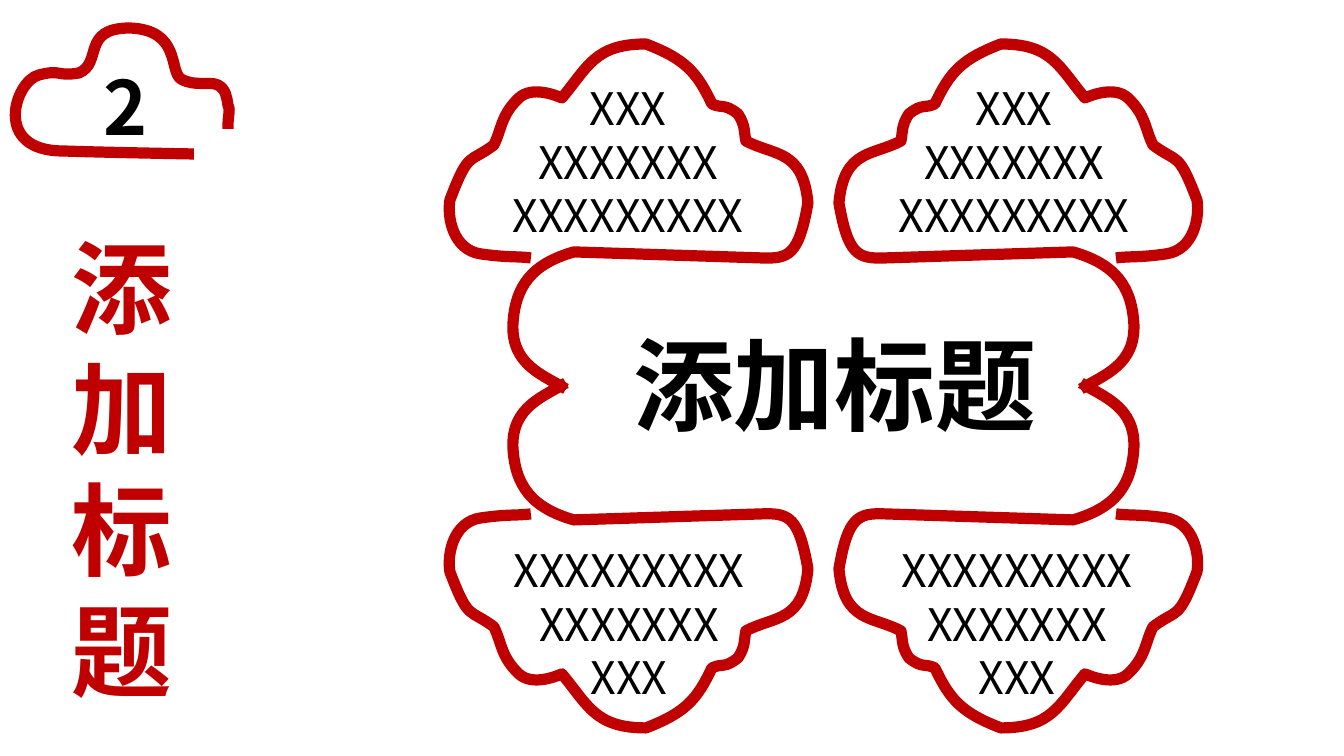
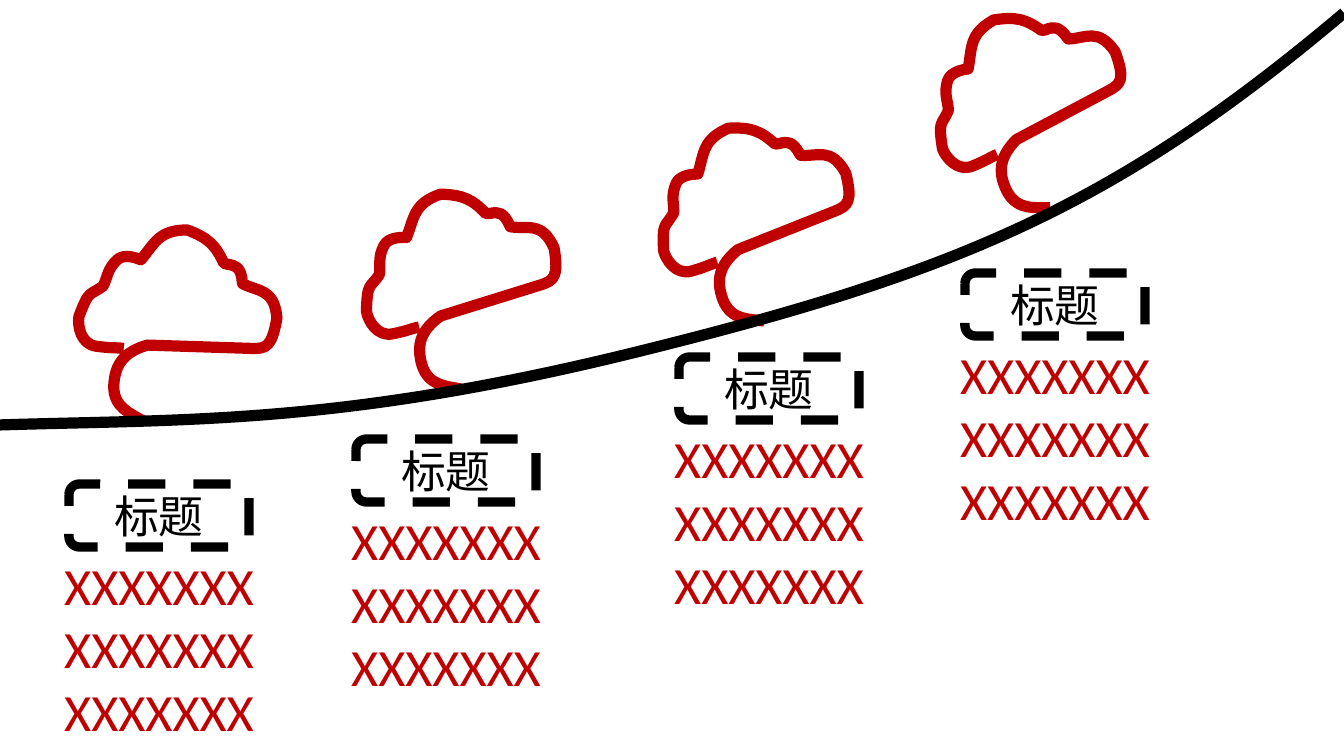
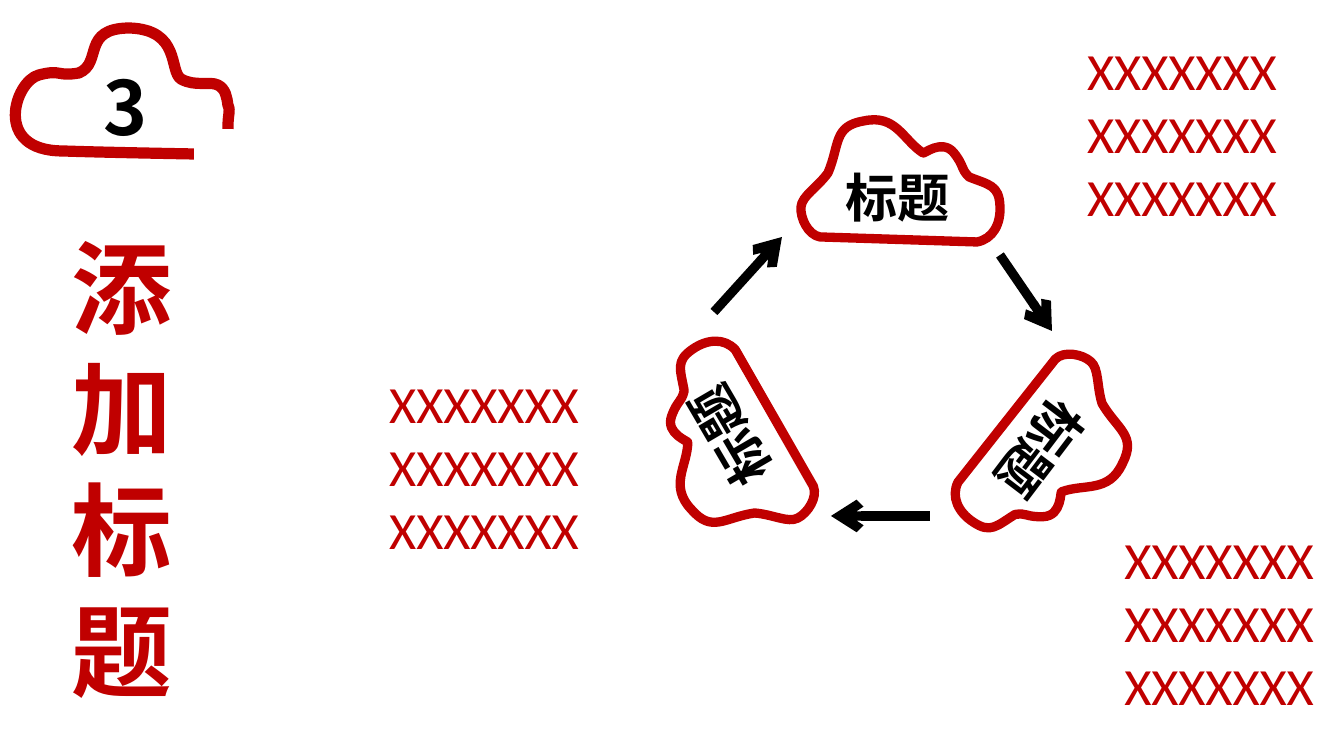
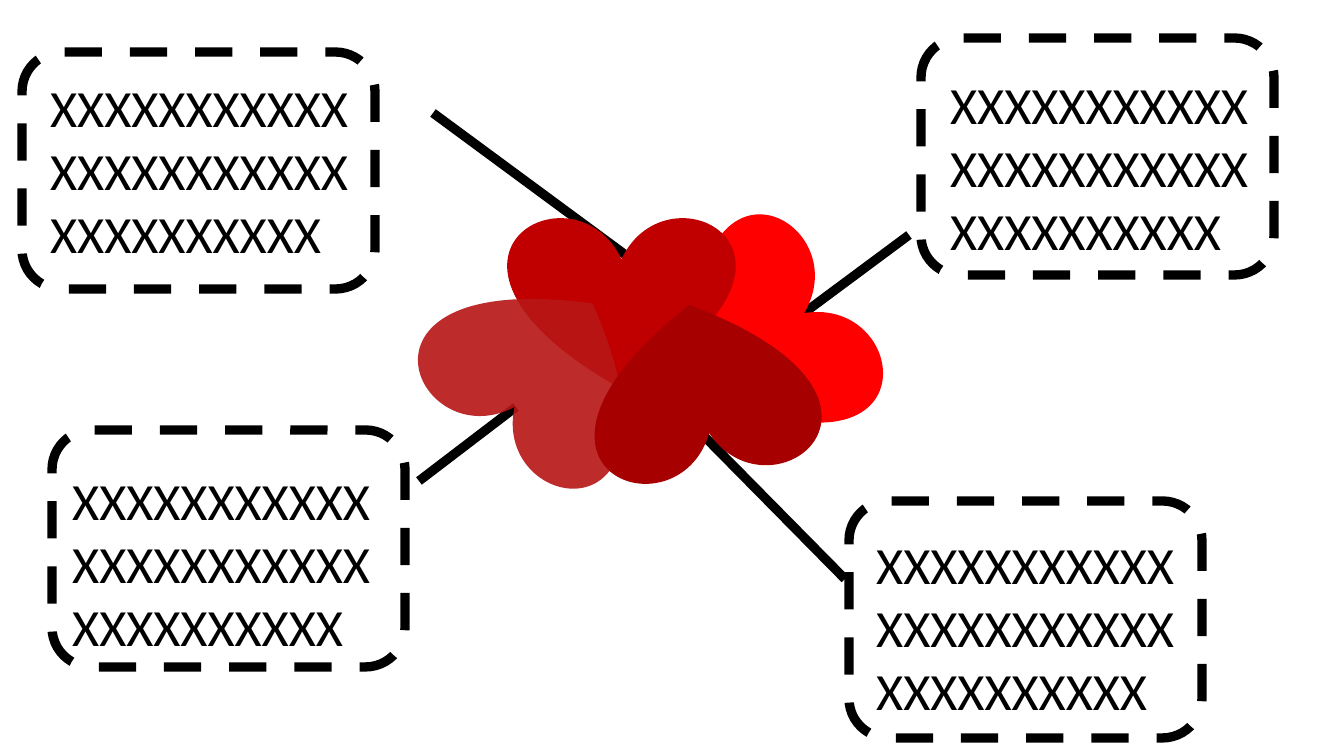
from pptx import Presentation
from pptx.dml.color import RGBColor as Rgb
from pptx.enum.dml import MSO_LINE as Dash
from pptx.enum.shapes import MSO_CONNECTOR as Link, MSO_SHAPE as Kind
from pptx.enum.text import MSO_ANCHOR as Anchor, MSO_AUTO_SIZE as Fit, PP_ALIGN as Align
from pptx.oxml.ns import qn
from pptx.util import Emu, Pt
from lxml.etree import SubElement as Sub

PX = 914400 / 134.4
COLORS = {"red": "C00000", "black": "000000", "white": "FFFFFF",
          "bright": "FF0000", "rose": "B81616", "deep": "A60000"}
CJK, LATIN = "Noto Sans CJK SC", "Calibri"

# Outlines: the frame, then a start point, lines (2 numbers) and curves (6 numbers)
BADGE = (16, 28, 214, 126), [
    (228, 129), (228, 112, 231, 112, 228, 105), (227, 98, 226, 89, 218, 85),
    (210, 81, 195, 87, 181, 79), (169, 71, 181, 30, 130, 28),
    (81, 28, 103, 63, 79, 73), (56, 77, 62, 69, 39, 75),
    (15, 81, -8, 151, 63, 151), (91, 152, 140, 153, 194, 154)]
CLOUD = (0, 0, 358, 345), [
    (81, 214), (65, 212, 60, 214, 31, 210), (3, 206, -3, 173, 0, 156),
    (19, 106, 19, 120, 44, 101), (52, 85, 51, 71, 69, 54),
    (82, 42, 105, 51, 112, 54), (138, 23, 145, 0, 196, 0),
    (235, 15, 247, 28, 262, 60), (273, 65, 274, 59, 288, 70),
    (296, 82, 294, 89, 296, 97), (324, 112, 353, 105, 358, 159),
    (349, 211, 339, 215, 312, 214), (124, 208),
    (82, 220, 65, 242, 63, 281), (62, 321, 93, 331, 116, 345)]
PUFF = (801, 120, 199, 122), [
    (820, 237), (977, 242), (993, 239, 1001, 224, 1000, 206),
    (999, 185, 989, 185, 969, 177), (960, 168, 965, 167, 954, 153),
    (942, 138, 923, 155, 923, 153), (903, 140, 896, 114, 864, 121),
    (833, 126, 840, 145, 828, 173), (817, 188, 802, 196, 801, 207),
    (800, 218, 808, 235, 820, 237)]
ROAD = (0, 13, 1344, 412), [
    (0, 425), (188, 419, 344, 426, 653, 348), (961, 271, 1118, 204, 1344, 13)]


def px(num):
    return Emu(round(num * PX))


def color(name):
    return Rgb.from_string(COLORS[name])


# Text
def write(frame, text, size=24, font=CJK, ink="black", bold=False, align=None):
    """Fill a text frame, one paragraph for each line of text."""
    frame.word_wrap = True
    for num, line in enumerate(text.split("\n")):
        para = frame.add_paragraph() if num else frame.paragraphs[0]
        para.alignment = align
        if font == CJK:
            para.line_spacing = Pt(1.2 * size)
        run = para.add_run()
        run.text = line
        run.font.size, run.font.name, run.font.bold = Pt(size), font, bold
        run.font.color.rgb = color(ink)
        Sub(run.font._element, qn("a:ea"), typeface=font)


def label(slide, text, box, turn=0, **style):
    shape = slide.shapes.add_textbox(*map(px, box))
    shape.rotation = turn
    write(shape.text_frame, text, **style)
    shape.text_frame.auto_size = Fit.SHAPE_TO_FIT_TEXT


def filler(slide, x, y, wide=233, count=21, ink="red"):
    label(slide, "X" * count, (x, y, wide, 203), size=28, font=LATIN, ink=ink)


# Shapes
def paint(shape, fill=None, line=None, width=5):
    shape.shadow.inherit = False
    if fill:
        shape.fill.solid()
        shape.fill.fore_color.rgb = color(fill)
    else:
        shape.fill.background()
    if line:
        shape.line.color.rgb = color(line)
        shape.line.width = Pt(width)
    else:
        shape.line.fill.background()


def bend(shape, size, segs, close):
    """Give a freeform its lines and cubic curves."""
    geo = next(shape._element.iter(qn("a:path")))
    geo.clear()
    for key, num in zip("wh", size):
        geo.set(key, str(px(num)))
    for num, seg in enumerate(segs):
        tag = "a:moveTo" if num == 0 else "a:lnTo" if len(seg) == 1 else "a:cubicBezTo"
        step = Sub(geo, qn(tag))
        for x, y in seg:
            Sub(step, qn("a:pt"), x=str(px(x)), y=str(px(y)))
    if close:
        Sub(geo, qn("a:close"))


def draw(slide, outline, box, flip=(False, False), turn=0, close=False,
         line="red", **style):
    (left, top, wide, high), rows = outline
    segs = []
    for row in rows:
        pairs = [(x - left, y - top) for x, y in zip(row[::2], row[1::2])]
        segs.append([(wide - x if flip[0] else x, high - y if flip[1] else y)
                     for x, y in pairs])
    ends = [tuple(map(px, seg[-1])) for seg in segs]
    pen = slide.shapes.build_freeform(*ends[0])
    pen.add_line_segments(ends[1:], close=close)
    shape = pen.convert_to_shape()
    bend(shape, (wide, high), segs, close)
    shape.left, shape.top, shape.width, shape.height = map(px, box)
    shape.rotation = turn
    paint(shape, line=line, **style)


def frame(slide, box):
    """Dashed box with round corners."""
    shape = slide.shapes.add_shape(Kind.ROUNDED_RECTANGLE, *map(px, box))
    paint(shape, line="black")
    shape.line.dash_style = Dash.DASH
    return shape


def heart(slide, x, y, turn, fill, alpha=None):
    shape = slide.shapes.add_shape(Kind.HEART, *map(px, (x, y, 227, 173)))
    shape.rotation = turn
    paint(shape, fill)
    if alpha:
        tint = shape._element.spPr.find(qn("a:solidFill"))[0]
        Sub(tint, qn("a:alpha"), val=str(alpha * 1000))


def link(slide, ends, arrow=False):
    line = slide.shapes.add_connector(Link.STRAIGHT, *map(px, ends))
    line.line.color.rgb = color("black")
    line.line.width = Pt(5)
    if arrow:
        Sub(line.line._get_or_add_ln(), qn("a:tailEnd"), type="arrow")
    Sub(line._element.spPr, qn("a:effectLst"))


def head(slide, num):
    """Numbered cloud and upright title at the left."""
    draw(slide, BADGE, BADGE[0], width=6)
    label(slide, num, (90, 54, 74, 103), size=40, bold=True)
    label(slide, "添加标题", (58, 219, 128, 503), size=54, ink="red", bold=True)


# Slides
def petals(slide):
    head(slide, "2")
    label(slide, "添加标题", (620, 316, 434, 136), size=54, bold=True)
    for x, y, flip in ((450, 44, (False, False)), (450, 383, (False, True)),
                       (839, 383, (True, True)), (839, 44, (True, False))):
        draw(slide, CLOUD, (x, y, 358, 345), flip, width=6)
    rows = ["X" * 9, "X" * 7, "X" * 3]
    for x, y, text in ((478, 536, rows), (866, 536, rows),
                       (863, 74, rows[::-1]), (477, 74, rows[::-1])):
        label(slide, "\n".join(text), (x, y, 302, 176), align=Align.CENTER)


def climb(slide):
    for x, y, turn in ((79, 230, 0), (364, 192, 340.9),
                       (659, 124, 336.5), (934, 12, 330.2)):
        draw(slide, CLOUD, (x, y, 198, 191), turn=turn, width=6)
    draw(slide, ROAD, ROAD[0], line="black", width=6)
    for x, y in ((69, 484), (356, 439), (679, 357), (965, 273)):
        card = frame(slide, (x, y, 180, 63))
        write(card.text_frame, "标题", align=Align.CENTER)
        card.text_frame.vertical_anchor = Anchor.MIDDLE
        filler(slide, x - 18, y + 63)


def cycle(slide):
    head(slide, "3")
    for x, y, turn in ((801, 120, 0), (624, 386, 238.4), (953, 396, 126.5)):
        draw(slide, PUFF, (x, y, 199, 122), turn=turn, close=True, fill="white")
    for ends in ((714, 312, 782, 237), (1000, 255, 1052, 331), (930, 516, 831, 516)):
        link(slide, ends, arrow=True)
    for x, y, turn in ((832, 159, 0), (660, 395, 239.7), (970, 413, 127.2)):
        label(slide, "标题", (x, y, 137, 77), turn, size=28, bold=True)
    for x, y in ((1111, 521), (1074, 32), (376, 365)):
        filler(slide, x, y)


def bloom(slide):
    for ends in ((516, 407, 419, 481), (433, 113, 650, 273),
                 (909, 235, 804, 313), (699, 431, 845, 579)):
        link(slide, ends)
    heart(slide, 655, 251, 55.7, "bright")
    heart(slide, 508, 216, 0, "red")
    heart(slide, 427, 286, 217, "rose", alpha=91)
    heart(slide, 589, 304, 171.2, "deep")
    for x, y in ((37, 69), (863, 526), (937, 66), (59, 462)):
        filler(slide, x, y, wide=339, count=32, ink="black")
    for x, y in ((52, 430), (849, 501), (921, 38), (22, 52)):
        frame(slide, (x, y, 353, 237))


def main():
    deck = Presentation()
    deck.slide_width, deck.slide_height = px(1344), px(756)
    for build in (petals, climb, cycle, bloom):
        build(deck.slides.add_slide(deck.slide_layouts[6]))
    deck.save("out.pptx")


if __name__ == "__main__":
    main()
